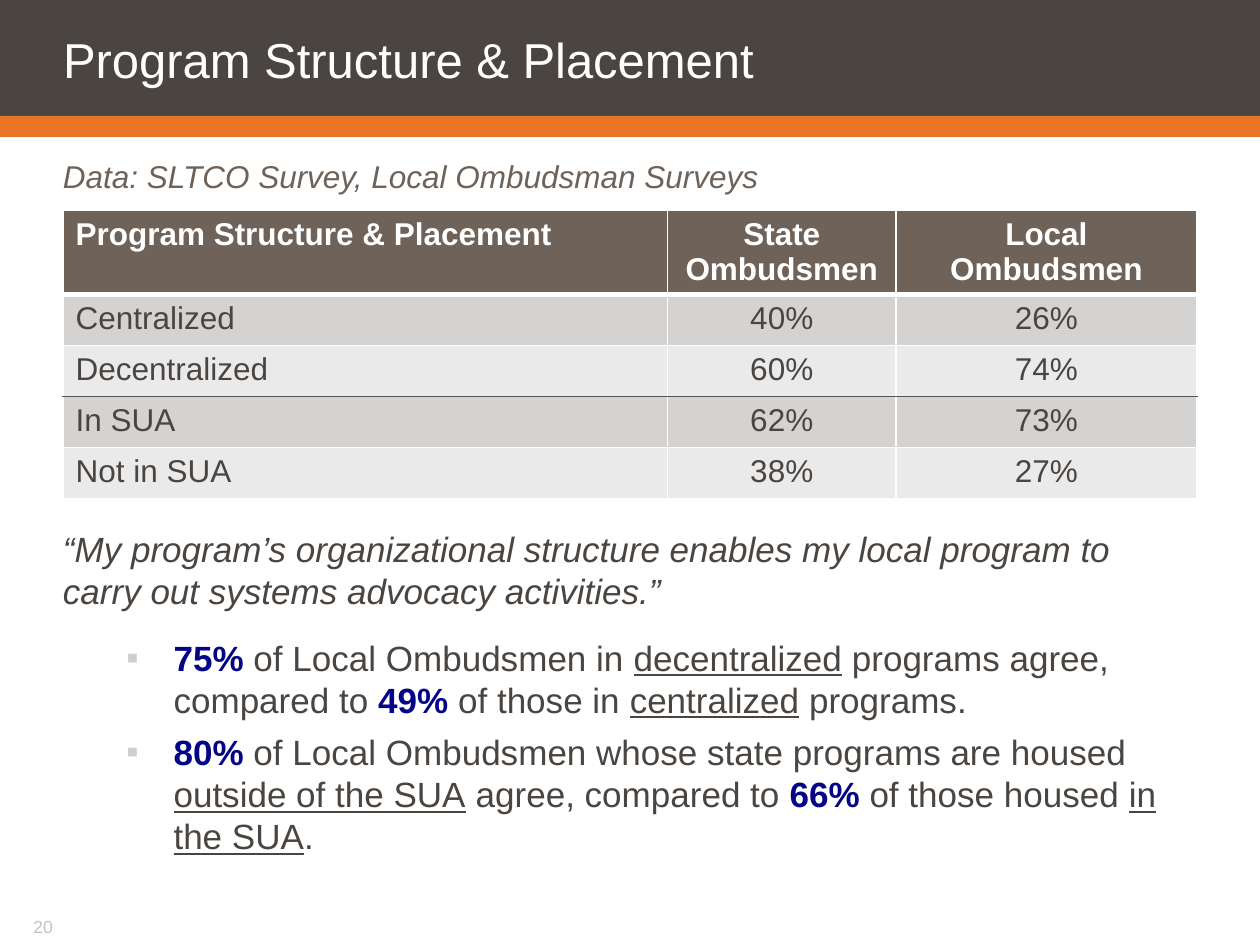
import pptx
import pptx.util
import pptx.dml.color
import pptx.enum.shapes
import pptx.enum.text
import pptx.oxml
import pptx.oxml.ns

Pt = pptx.util.Pt
Align = pptx.enum.text.PP_ALIGN
Anchor = pptx.enum.text.MSO_ANCHOR

HUES = {
    "dark": "4A4541", "flame": "E87424", "brown": "6E6259", "white": "FFFFFF",
    "navy": "040488", "rule": "55565A", "odd": "D5D3D1", "even": "EBEAEA",
    "mark": "D1CDCA", "page": "C8C2BF",
}
TITLE = "Program Structure & Placement"
BANDS = [(0, 66.25, "dark"), (66.25, 12, "flame")]
SOURCE = "Data: SLTCO Survey, Local Ombudsman Surveys"
ROWS = [
    (TITLE, "State Ombudsmen", "Local Ombudsmen"),
    ("Centralized", "40%", "26%"),
    ("Decentralized", "60%", "74%"),
    ("In SUA", "62%", "73%"),
    ("Not in SUA", "38%", "27%"),
]
WIDTHS = [345.5, 130.5, 172]
HEIGHTS = [48] + [29.2] * 4
SPLIT = 2
QUOTE = ("“My program’s organizational structure enables my local program "
         "to carry out systems advocacy activities.”")
POINTS = [
    [("75% ", "key"), ("of Local Ombudsmen in ", ""), ("decentralized", "line"),
     (" programs agree, compared to ", ""), ("49% ", "key"),
     ("of those in ", ""), ("centralized", "line"), (" programs.", "")],
    [("80% ", "key"), ("of Local Ombudsmen whose state programs are housed ", ""),
     ("outside of the SUA", "line"), (" agree, compared to ", ""),
     ("66%", "key"), (" of those housed ", ""), ("in the SUA", "line"), (".", "")],
]
STYLES = {
    "": {"hue": "dark"},
    "key": {"hue": "navy", "bold": True},
    "line": {"hue": "dark", "underline": True},
}


def color(name):
    return pptx.dml.color.RGBColor.from_string(HUES[name])


def apply(item, form):
    for name, value in form.items():
        setattr(item, name, value)


def write(para, text, size, hue, **form):
    run = para.add_run()
    run.text = text
    apply(run.font, {"name": "Arial", "size": Pt(size), **form})
    run.font.color.rgb = color(hue)


def frame(shape, pads, **form):
    sides = ("margin_left", "margin_top", "margin_right", "margin_bottom")
    base = {"word_wrap": True, "auto_size": pptx.enum.text.MSO_AUTO_SIZE.NONE,
            "vertical_anchor": Anchor.TOP}
    base.update(zip(sides, map(Pt, pads)))
    apply(shape.text_frame, {**base, **form})
    return shape.text_frame


def box(slide, area, pads, **form):
    return frame(slide.shapes.add_textbox(*map(Pt, area)), pads, **form)


def edge(cell, side, hue, width):
    cell._tc.get_or_add_tcPr().append(pptx.oxml.parse_xml(
        f'<a:{side} {pptx.oxml.ns.nsdecls("a")} w="{Pt(width)}"><a:solidFill>'
        f'<a:srgbClr val="{HUES[hue]}"/></a:solidFill></a:{side}>'))


def bullet(para):
    props = para._p.get_or_add_pPr()
    apply(para, {"level": 1, "space_before": Pt(6)})
    props.set("marL", str(Pt(63.2)))
    props.set("indent", str(Pt(-27)))
    space = pptx.oxml.ns.nsdecls("a")
    for part in (f'<a:buClr {space}><a:srgbClr val="{HUES["mark"]}"/></a:buClr>',
                 f'<a:buFont {space} typeface="Arial"/>',
                 f'<a:buChar {space} char="▪"/>'):
        props.append(pptx.oxml.parse_xml(part))


def head(slide):
    for top, height, hue in BANDS:
        band = slide.shapes.add_shape(
            pptx.enum.shapes.MSO_SHAPE.RECTANGLE, 0, Pt(top), Pt(720), Pt(height))
        band.shadow.inherit = False
        band.fill.solid()
        band.fill.fore_color.rgb = color(hue)
        band.line.fill.background()
    title = slide.shapes.title
    apply(title, {"left": 0, "top": 0, "width": Pt(720), "height": Pt(66.25)})
    slide.shapes._spTree.append(title._element)
    para = frame(title, (36, 7.2, 7.2, 0), vertical_anchor=Anchor.MIDDLE).paragraphs[0]
    apply(para, {"alignment": Align.LEFT, "line_spacing": Pt(28)})
    write(para, TITLE, 28, "white")


def grid(slide):
    area = (36, 120.2, sum(WIDTHS), sum(HEIGHTS))
    table = slide.shapes.add_table(len(ROWS), len(WIDTHS), *map(Pt, area)).table
    for col, width in zip(table.columns, WIDTHS):
        col.width = Pt(width)
    for r, (texts, height) in enumerate(zip(ROWS, HEIGHTS)):
        table.rows[r].height = Pt(height)
        top = r == 0
        fill = "brown" if top else "odd" if r % 2 else "even"
        for c, text in enumerate(texts):
            cell = table.cell(r, c)
            for side in ("lnL", "lnR"):
                edge(cell, side, "white", 1)
            edge(cell, "lnT", "rule" if r == SPLIT + 1 else "white", 3 if r == 1 else 1)
            edge(cell, "lnB", "rule" if r == SPLIT else "white", 3 if top else 1)
            cell.fill.solid()
            cell.fill.fore_color.rgb = color(fill)
            para = cell.text_frame.paragraphs[0]
            para.alignment = Align.CENTER if c else Align.LEFT
            write(para, text, 18, "white" if top else "dark", bold=top)


def body(slide):
    text = box(slide, (36, 298, 648, 200), (0, 3.6, 0, 3.6))
    para = text.paragraphs[0]
    para.space_after = Pt(8)
    write(para, QUOTE, 20, "dark", italic=True)
    for runs in POINTS:
        para = text.add_paragraph()
        bullet(para)
        for words, style in runs:
            write(para, words, 20, **STYLES[style])


def main():
    deck = pptx.Presentation()
    apply(deck, {"slide_width": Pt(720), "slide_height": Pt(540)})
    slide = deck.slides.add_slide(deck.slide_layouts[5])
    head(slide)
    note = box(slide, (0, 86.4, 720, 25.2), (36, 3.6, 0, 3.6))
    write(note.paragraphs[0], SOURCE, 18, "brown", italic=True)
    grid(slide)
    body(slide)
    page = box(slide, (12, 523.4, 138, 13), (7.2, 0, 7.2, 3.6), word_wrap=False)
    write(page.paragraphs[0], "20", 10, "page")
    deck.save("out.pptx")


if __name__ == "__main__":
    main()
